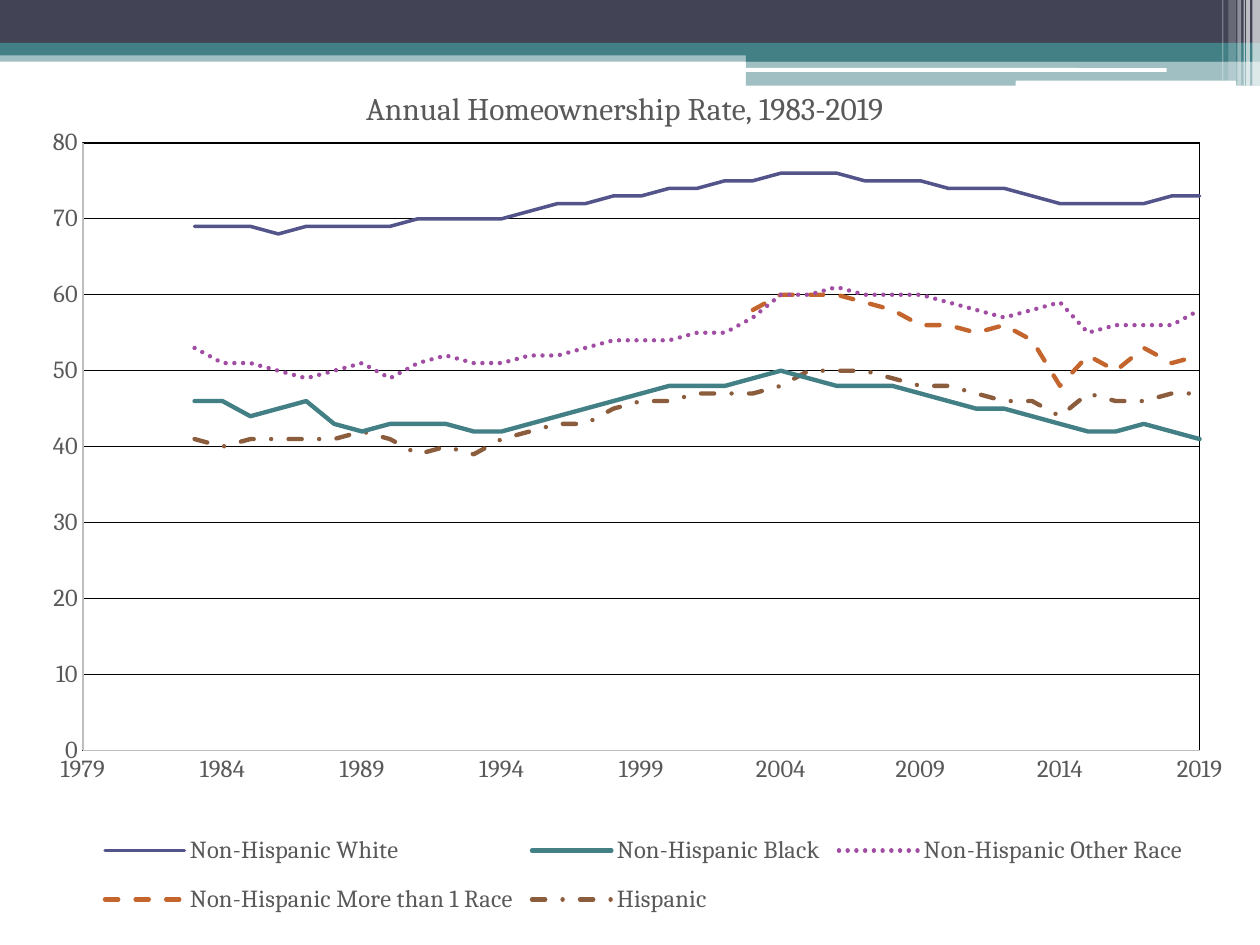
from dataclasses import dataclass
from typing import Optional

from lxml import etree
from pptx import Presentation
from pptx import util as u
from pptx.chart.data import XyChartData
from pptx.dml.color import RGBColor
from pptx.enum import chart as charts, dml, shapes
from pptx.oxml import parse_xml
from pptx.oxml.ns import nsdecls, qn

SLATE = RGBColor(0x42, 0x44, 0x56)
TEAL = RGBColor(0x43, 0x80, 0x86)
WHITE = RGBColor(0xFF, 0xFF, 0xFF)
BLACK = RGBColor(0, 0, 0)
INDIGO = RGBColor(0x53, 0x54, 0x8A)
PURPLE = RGBColor(0xA0, 0x4D, 0xA3)
ORANGE = RGBColor(0xC4, 0x65, 0x2D)
BROWN = RGBColor(0x8B, 0x5D, 0x3D)
TEXT_GRAY = RGBColor(0x59, 0x59, 0x59)
AXIS_GRAY = RGBColor(0xBF, 0xBF, 0xBF)

FONT = "Cambria"
COLUMNS, ROWS = 1000, 750
CHART_COLUMNS, CHART_ROWS = 948, 688
LAST_YEAR = 2019
RECTANGLE = shapes.MSO_SHAPE.RECTANGLE
ROUNDED = shapes.MSO_SHAPE.ROUNDED_RECTANGLE


@dataclass
class Band:
    column: int
    row: int
    columns: int
    rows: int
    color: RGBColor
    opacity: int = 100
    kind: shapes.MSO_SHAPE = RECTANGLE


@dataclass
class RateSeries:
    name: str
    color: RGBColor
    width: float
    dash: Optional[dml.MSO_LINE]
    rates: list[int]


BANDS = [
    Band(0, 40, 1000, 9, TEAL, 50),
    Band(0, 0, 1000, 34, SLATE),
    Band(0, 34, 1000, 10, TEAL),
    Band(592, 39, 408, 10, TEAL),
    Band(592, 48, 408, 20, TEAL, 50),
    Band(591, 54, 335, 3, WHITE, kind=ROUNDED),
    Band(806, 64, 175, 5, WHITE, kind=ROUNDED),
    Band(994, 0, 6, 68, WHITE, 65),
    Band(989, 0, 3, 68, WHITE, 65),
    Band(987, 0, 1, 68, WHITE, 60),
    Band(982, 0, 3, 68, WHITE, 40),
    Band(975, 0, 6, 64, WHITE, 20),
    Band(970, 0, 1, 64, WHITE, 30),
]

SERIES = [
    RateSeries("Non-Hispanic White", INDIGO, 2, None, [
        69, 69, 69, 68, 69, 69, 69, 69, 70, 70, 70, 70, 71, 72, 72, 73, 73, 74, 74,
        75, 75, 76, 76, 76, 75, 75, 75, 74, 74, 74, 73, 72, 72, 72, 72, 73, 73]),
    RateSeries("Non-Hispanic Black", TEAL, 2.5, None, [
        46, 46, 44, 45, 46, 43, 42, 43, 43, 43, 42, 42, 43, 44, 45, 46, 47, 48, 48,
        48, 49, 50, 49, 48, 48, 48, 47, 46, 45, 45, 44, 43, 42, 42, 43, 42, 41]),
    RateSeries("Non-Hispanic Other Race", PURPLE, 2.5, dml.MSO_LINE.ROUND_DOT, [
        53, 51, 51, 50, 49, 50, 51, 49, 51, 52, 51, 51, 52, 52, 53, 54, 54, 54, 55,
        55, 57, 60, 60, 61, 60, 60, 60, 59, 58, 57, 58, 59, 55, 56, 56, 56, 58]),
    RateSeries("Non-Hispanic More than 1 Race", ORANGE, 2.5, dml.MSO_LINE.DASH, [
        58, 60, 60, 60, 59, 58, 56, 56, 55, 56, 54, 48, 52, 50, 53, 51, 52]),
    RateSeries("Hispanic", BROWN, 2.5, dml.MSO_LINE.DASH_DOT, [
        41, 40, 41, 41, 41, 41, 42, 41, 39, 40, 39, 41, 42, 43, 43, 45, 46, 46, 47,
        47, 47, 48, 50, 50, 50, 49, 48, 48, 47, 46, 46, 44, 47, 46, 46, 47, 47]),
]


def set_font(font, size: float, color: RGBColor) -> None:
    font.name = FONT
    font.size = u.Pt(size)
    font.bold = False
    font.color.rgb = color


def set_line(line, color: RGBColor, width: float) -> None:
    line.color.rgb = color
    line.width = u.Pt(width)


def grid_box(presentation, column: int, row: int, columns: int, rows: int) -> list[int]:
    cell_width = presentation.slide_width / COLUMNS
    cell_height = presentation.slide_height / ROWS
    return [round(column * cell_width), round(row * cell_height),
            round(columns * cell_width), round(rows * cell_height)]


def draw_band(presentation, slide, band: Band) -> None:
    box = grid_box(presentation, band.column, band.row, band.columns, band.rows)
    shape = slide.shapes.add_shape(band.kind, *box)
    shape.shadow.inherit = False
    shape.line.fill.background()
    shape.fill.solid()
    shape.fill.fore_color.rgb = band.color
    if band.opacity < 100:
        color = shape.fill._xPr.find(qn("a:solidFill"))[0]
        etree.SubElement(color, qn("a:alpha"), val=str(band.opacity * 1000))


def make_layout(column: float, row: float, columns: float = 0, rows: float = 0,
                target: str = ""):
    values = {"layoutTarget": target, "xMode": "edge", "yMode": "edge",
              "x": column / CHART_COLUMNS, "y": row / CHART_ROWS,
              "w": columns / CHART_COLUMNS, "h": rows / CHART_ROWS}
    children = "".join(f'<c:{tag} val="{value}"/>' for tag, value in values.items() if value)
    return parse_xml(f'<c:layout {nsdecls("c")}><c:manualLayout>{children}'
                     '</c:manualLayout></c:layout>')


def place(element, previous: Optional[str], layout) -> None:
    for old in element.findall(qn("c:layout")):
        element.remove(old)
    if previous is None:
        element.insert(0, layout)
    else:
        element.find(qn(previous)).addnext(layout)


def format_axis(axis, minimum: int, maximum: int, step: int) -> None:
    axis.minimum_scale = minimum
    axis.maximum_scale = maximum
    axis.major_unit = step
    axis.major_tick_mark = charts.XL_TICK_MARK.NONE
    axis.minor_tick_mark = charts.XL_TICK_MARK.NONE
    axis.tick_labels.number_format = "General"
    axis.tick_labels.number_format_is_linked = False
    set_font(axis.tick_labels.font, 14, TEXT_GRAY)
    set_line(axis.format.line, AXIS_GRAY, 0.75)


def draw_chart(presentation, slide) -> None:
    data = XyChartData()
    for item in SERIES:
        series = data.add_series(item.name)
        first_year = LAST_YEAR - len(item.rates) + 1
        for year, rate in enumerate(item.rates, first_year):
            series.add_data_point(year, rate)
    chart = slide.shapes.add_chart(
        charts.XL_CHART_TYPE.XY_SCATTER_LINES_NO_MARKERS,
        *grid_box(presentation, 26, 62, CHART_COLUMNS, CHART_ROWS), data).chart
    set_font(chart.font, 10, BLACK)

    chart.has_title = True
    paragraph = chart.chart_title.text_frame.paragraphs[0]
    paragraph.text = "Annual Homeownership Rate, 1983-2019"
    set_font(paragraph.font, 18, TEXT_GRAY)
    place(chart.chart_title._element, "c:tx", make_layout(260, 3))

    chart.has_legend = True
    chart.legend.position = charts.XL_LEGEND_POSITION.BOTTOM
    chart.legend.include_in_layout = False
    set_font(chart.legend.font, 14, TEXT_GRAY)
    place(chart.legend._element, "c:legendPos", make_layout(49, 586, 872, 93))

    format_axis(chart.category_axis, 1979, LAST_YEAR, 5)
    chart.category_axis.has_major_gridlines = False
    format_axis(chart.value_axis, 0, 80, 10)
    chart.value_axis.has_major_gridlines = True
    set_line(chart.value_axis.major_gridlines.format.line, BLACK, 0.75)

    plot_area = chart._chartSpace.chart.plotArea
    place(plot_area, None, make_layout(39.8, 51.4, 886.4, 482.4, "inner"))
    plot_area.append(parse_xml(
        f'<c:spPr {nsdecls("c", "a")}><a:noFill/><a:ln w="9525"><a:solidFill>'
        f'<a:srgbClr val="{BLACK}"/></a:solidFill></a:ln></c:spPr>'))

    chart.plots[0].vary_by_categories = False
    for series, item in zip(chart.plots[0].series, SERIES):
        series.smooth = False
        series.marker.style = charts.XL_MARKER_STYLE.NONE
        set_line(series.format.line, item.color, item.width)
        series._element.spPr.find(qn("a:ln")).set("cap", "rnd")
        if item.dash is not None:
            series.format.line.dash_style = item.dash


def main() -> None:
    presentation = Presentation()
    presentation.slide_width = u.Inches(10)
    presentation.slide_height = u.Inches(7.5)
    slide = presentation.slides.add_slide(presentation.slide_layouts[6])
    for band in BANDS:
        draw_band(presentation, slide, band)
    draw_chart(presentation, slide)
    presentation.save("out.pptx")


if __name__ == "__main__":
    main()
